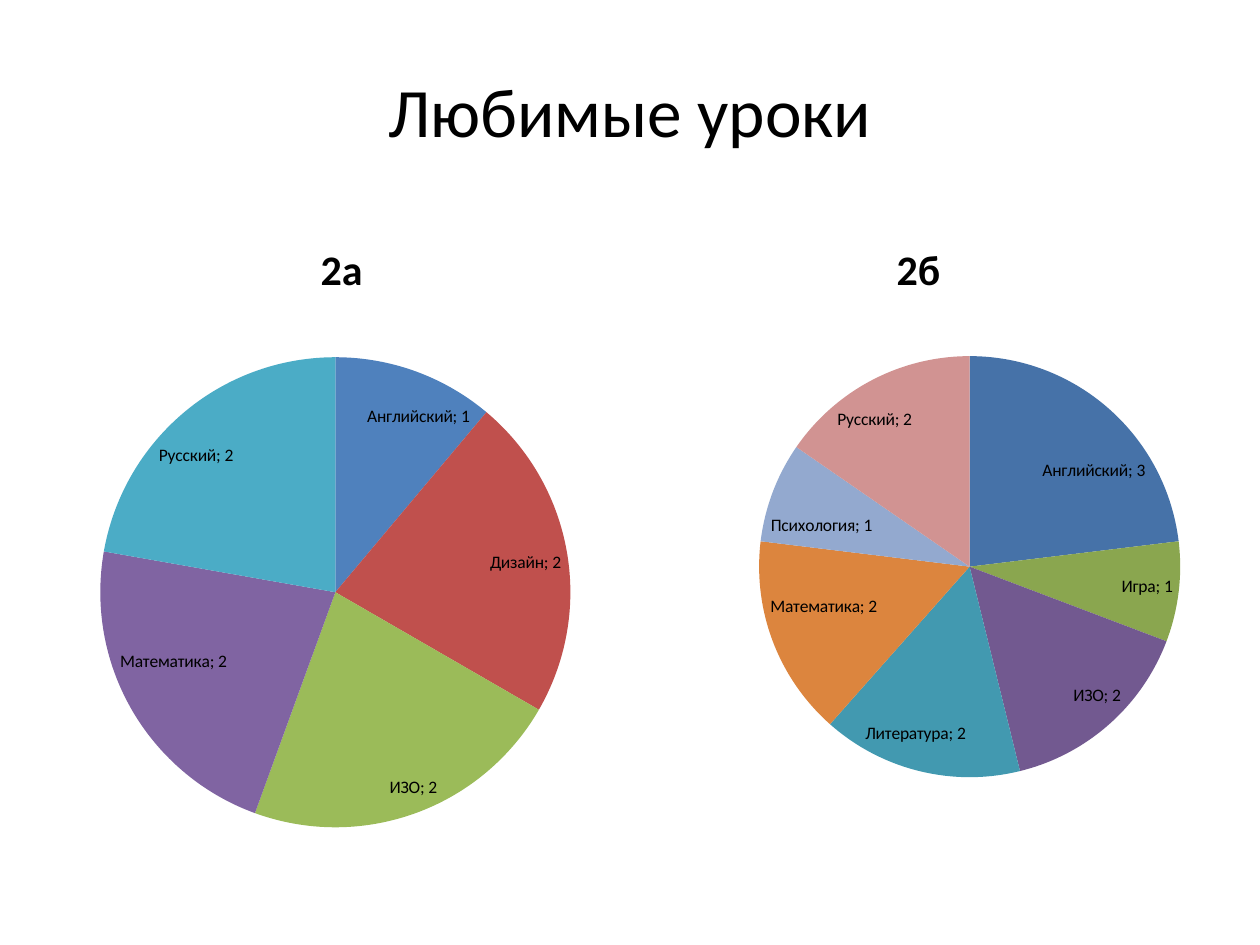
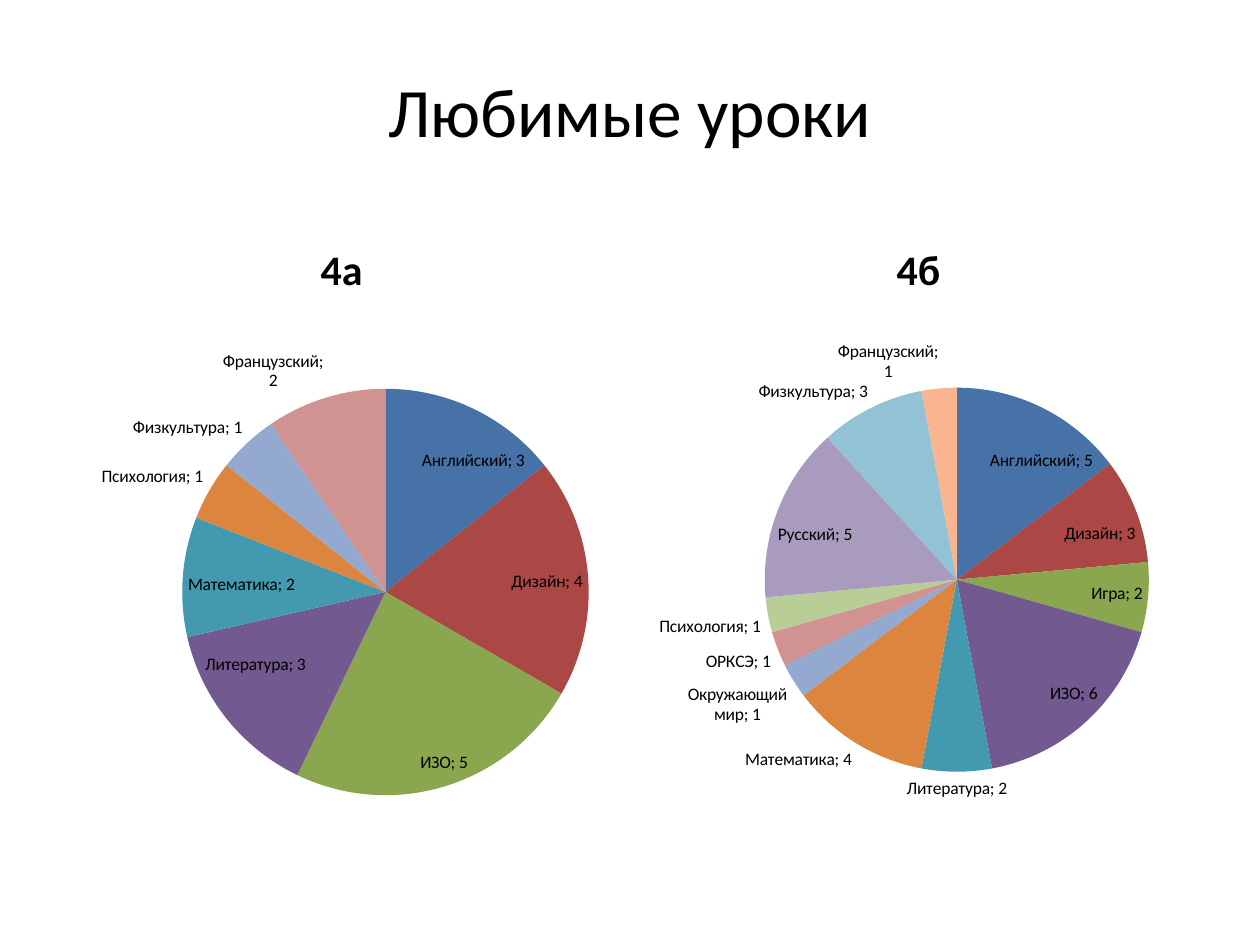
from dataclasses import dataclass
from typing import Optional

from pptx import Presentation
from pptx.chart.data import CategoryChartData
from pptx.dml.color import RGBColor
from pptx.enum import chart as charts, text
from pptx.oxml import parse_xml
from pptx.oxml.ns import nsdecls
from pptx.util import Cm, Pt

FONT = "Calibri"
BLACK = "000000"
TITLE = "Любимые уроки"
BRIGHT = ["4F81BD", "C0504D", "9BBB59", "8064A2", "4BACC6"]
EXTENDED = ["4672A8", "AB4744", "8AA64F", "725990", "4299B0", "DC853E",
            "93A9CF", "D19392", "B9CD96", "A99BBD", "91C3D5", "F9B590"]

SLIDE_WIDTH, SLIDE_HEIGHT = 25.4, 19.05
MARGIN = 1.27
COLUMN_WIDTH = 11.23
COLUMN_LEFTS = (MARGIN, SLIDE_WIDTH - MARGIN - COLUMN_WIDTH)
HEADING_TOP, HEADING_HEIGHT = 4.27, 1.78
CHART_TOP, CHART_HEIGHT = HEADING_TOP + HEADING_HEIGHT, 10.97


@dataclass
class ClassPie:
    """Favourite lessons of one class; pie offsets and diameter are in cm."""
    name: str
    lessons: dict[str, Optional[int]]
    left: float
    top: float
    diameter: float
    colours: list[str]


SLIDES = [
    [
        ClassPie("2а", {"Английский": 1, "Дизайн": 2, "ИЗО": 2,
                        "Математика": 2, "Русский": 2},
                 0.75, 1.15, 9.48, BRIGHT),
        ClassPie("2б", {"Английский": 3, "Дизайн": None, "Игра": 1, "ИЗО": 2,
                        "Литература": 2, "Математика": 2, "Психология": 1,
                        "Русский": 2},
                 2.4, 1.13, 8.49, EXTENDED),
    ],
    [
        ClassPie("4а", {"Английский": 3, "Дизайн": 4, "ИЗО": 5,
                        "Литература": 3, "Математика": 2, "Психология": 1,
                        "Физкультура": 1, "Французский": 2},
                 2.4, 1.79, 8.2, EXTENDED),
        ClassPie("4б", {"Английский": 5, "Дизайн": 3, "Игра": 2, "ИЗО": 6,
                        "Литература": 2, "Математика": 4,
                        "Окружающий мир": 1, "ОРКСЭ": 1, "Психология": 1,
                        "Русский": 5, "Физкультура": 3, "Французский": 1},
                 2.51, 1.77, 7.75, EXTENDED),
    ],
]


def colour(value: str) -> RGBColor:
    return RGBColor.from_string(value)


def format_font(font, size: float, bold: bool = False) -> None:
    font.name = FONT
    font.size = Pt(size)
    font.bold = bold
    font.color.rgb = colour(BLACK)


def write(box, words: str, *, size: float, bold: bool = False,
          anchor=text.MSO_ANCHOR.MIDDLE) -> None:
    frame = box.text_frame
    frame.word_wrap = True
    frame.auto_size = text.MSO_AUTO_SIZE.NONE
    frame.vertical_anchor = anchor
    para = frame.paragraphs[0]
    para.alignment = text.PP_ALIGN.CENTER
    span = para.add_run()
    span.text = words
    format_font(span.font, size, bold)


def place_plot(chart, pie: ClassPie) -> None:
    """Fix the circle's place inside the chart frame."""
    fractions = {"x": pie.left / COLUMN_WIDTH, "y": pie.top / CHART_HEIGHT,
                 "w": pie.diameter / COLUMN_WIDTH,
                 "h": pie.diameter / CHART_HEIGHT}
    modes = '<c:xMode val="edge"/><c:yMode val="edge"/>'
    sizes = "".join(f'<c:{key} val="{part:.3f}"/>'
                    for key, part in fractions.items())
    layout = parse_xml(
        f'<c:layout {nsdecls("c")}><c:manualLayout>'
        f'<c:layoutTarget val="inner"/>{modes}{sizes}'
        '</c:manualLayout></c:layout>')
    area = chart.plots[0]._element.getparent()
    for old in area.findall(layout.tag):
        area.remove(old)
    area.insert(0, layout)


def add_pie(page, pie: ClassPie, left: float) -> None:
    data = CategoryChartData()
    data.categories = list(pie.lessons)
    data.add_series("Уроки", list(pie.lessons.values()))
    chart = page.shapes.add_chart(
        charts.XL_CHART_TYPE.PIE, Cm(left), Cm(CHART_TOP),
        Cm(COLUMN_WIDTH), Cm(CHART_HEIGHT), data).chart
    chart.has_legend = False
    chart.has_title = False
    format_font(chart.font, 10)
    place_plot(chart, pie)

    plot = chart.plots[0]
    plot.vary_by_categories = True
    for index, fill_colour in zip(range(len(pie.lessons)), pie.colours):
        fill = plot.series[0].points[index].format.fill
        fill.solid()
        fill.fore_color.rgb = colour(fill_colour)

    plot.has_data_labels = True
    labels = plot.data_labels
    labels.show_category_name = True
    labels.show_value = True
    labels.show_percentage = False
    labels.position = charts.XL_LABEL_POSITION.BEST_FIT
    format_font(labels.font, 10)
    separator = parse_xml(f'<c:separator {nsdecls("c")}>; </c:separator>')
    labels._element.find(
        separator.tag.replace("separator", "showBubbleSize")
    ).addnext(separator)


def add_class(page, pie: ClassPie, left: float) -> None:
    heading = page.shapes.add_textbox(
        Cm(left), Cm(HEADING_TOP), Cm(COLUMN_WIDTH), Cm(HEADING_HEIGHT))
    write(heading, pie.name, size=24, bold=True,
          anchor=text.MSO_ANCHOR.BOTTOM)
    add_pie(page, pie, left)


def add_slide(deck, pies: list[ClassPie]) -> None:
    page = deck.slides.add_slide(deck.slide_layouts.get_by_name("Title Only"))
    title = page.shapes.title
    title.left, title.top = Cm(MARGIN), Cm(1.32)
    title.width, title.height = Cm(SLIDE_WIDTH - 2 * MARGIN), Cm(1.8)
    write(title, TITLE, size=39.6)
    for pie, left in zip(pies, COLUMN_LEFTS):
        add_class(page, pie, left)


def main() -> None:
    deck = Presentation()
    deck.slide_width, deck.slide_height = Cm(SLIDE_WIDTH), Cm(SLIDE_HEIGHT)
    for pies in SLIDES:
        add_slide(deck, pies)
    deck.save("out.pptx")


if __name__ == "__main__":
    main()
